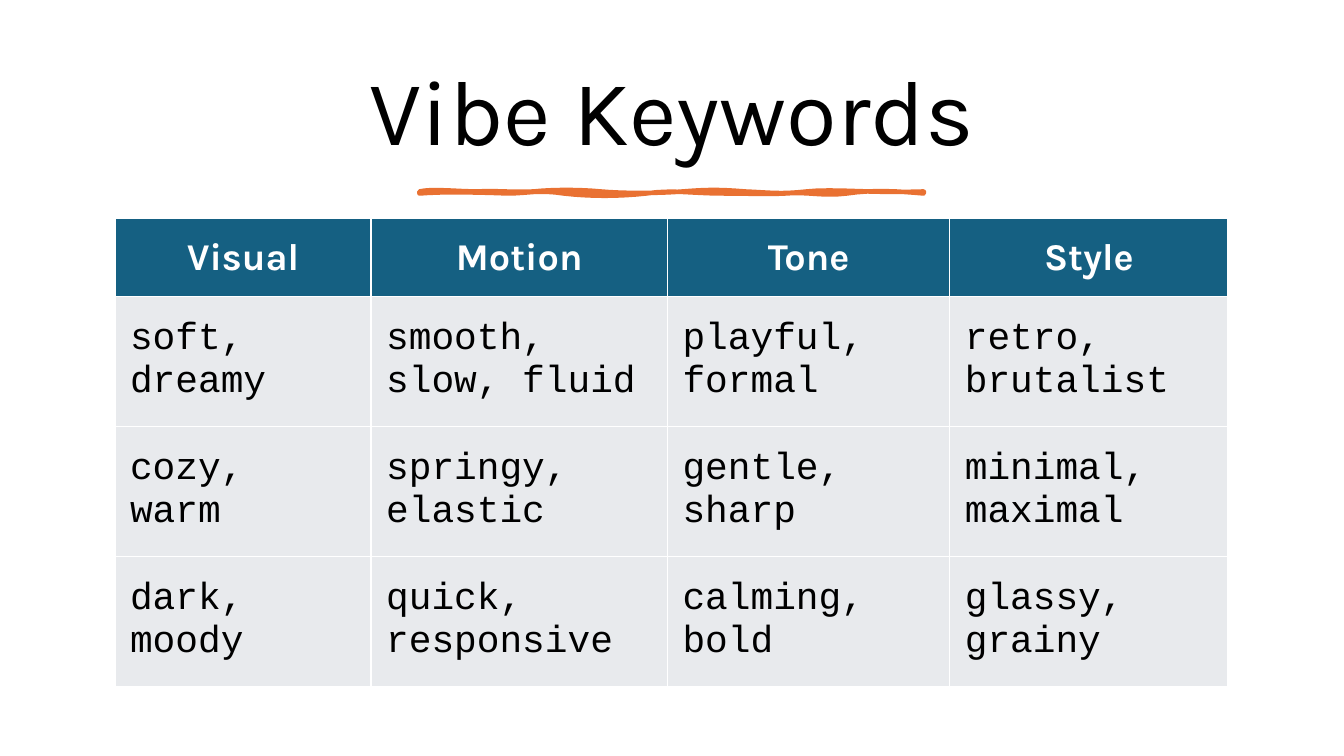
from dataclasses import dataclass

import pptx
import pptx.dml.color
import pptx.enum.text
import pptx.oxml
import pptx.oxml.ns
import pptx.util
from pptx.util import Inches


def color(value):
    return pptx.dml.color.RGBColor.from_string(value)


@dataclass(frozen=True)
class Theme:
    heading_font: str = "Karla"
    keyword_font: str = "Courier New"
    title_size: int = 66
    table_size: int = 27
    ink: str = "000000"
    white: str = "FFFFFF"
    accent: str = "E97132"
    header: str = "156082"
    body: str = "E8EAED"


THEME = Theme()
CENTER = pptx.enum.text.PP_ALIGN.CENTER
LEFT = pptx.enum.text.PP_ALIGN.LEFT
MIDDLE = pptx.enum.text.MSO_ANCHOR.MIDDLE

KEYWORDS = [
    ["Visual", "Motion", "Tone", "Style"],
    ["soft, dreamy", "smooth, slow, fluid", "playful, formal", "retro, brutalist"],
    ["cozy, warm", "springy, elastic", "gentle, sharp", "minimal, maximal"],
    ["dark, moody", "quick, responsive", "calming, bold", "glassy, grainy"],
]
COLUMN_WIDTHS = [2.54, 2.94, 2.8, 2.76]
ROW_HEIGHTS = [0.77, 1.29, 1.29, 1.29]

# Bézier segments of the brush stroke, in inches from its top left corner:
# two control points and an end point each.
STROKE = [
    (0.12, -0.03, 0.38, 0, 0.57, 0), (0.76, -0.01, 0.93, 0.01, 1.13, 0),
    (1.33, -0.02, 1.58, -0.02, 1.8, 0), (2.01, 0.02, 2.37, 0.02, 2.61, 0),
    (2.86, -0.02, 2.98, -0.02, 3.23, 0), (3.47, 0.01, 3.58, 0.03, 3.84, 0),
    (4.1, -0.03, 4.51, 0.02, 5, 0), (5.01, 0.01, 5, 0.01, 5, 0.02),
    (4.79, 0, 4.49, -0.02, 4.24, 0.02), (3.99, 0.05, 3.85, 0, 3.63, 0.02),
    (3.4, 0.03, 3.31, 0.02, 3.01, 0.02), (2.71, 0.02, 2.51, -0.02, 2.25, 0.02),
    (1.98, 0.05, 1.69, 0.05, 1.43, 0.02), (1.18, -0.02, 1.07, 0.02, 0.87, 0.02),
    (0.67, 0.01, 0.22, 0, 0, 0.02),
]


def style_paragraph(paragraph, font_name, size, font_color, alignment, bold=False):
    paragraph.alignment = alignment
    paragraph.font.name = font_name
    paragraph.font.size = pptx.util.Pt(size)
    paragraph.font.color.rgb = color(font_color)
    paragraph.font.bold = bold


def add_title(slide, text, left, top, width, height):
    title = slide.shapes.title
    title.left, title.top = Inches(left), Inches(top)
    title.width, title.height = Inches(width), Inches(height)
    title.text_frame.text = text
    title.text_frame.vertical_anchor = MIDDLE
    paragraph = title.text_frame.paragraphs[0]
    paragraph.line_spacing = 0.9
    style_paragraph(paragraph, THEME.heading_font, THEME.title_size, THEME.ink, CENTER)


def stroke_points(segments, steps=8):
    """Sample the Bézier segments, starting from the origin."""
    x, y = 0, 0
    for x1, y1, x2, y2, end_x, end_y in segments:
        for step in range(1, steps + 1):
            t = step / steps
            weights = ((1 - t) ** 3, 3 * t * (1 - t) ** 2, 3 * t * t * (1 - t), t ** 3)
            yield (sum(w * v for w, v in zip(weights, (x, x1, x2, end_x))),
                   sum(w * v for w, v in zip(weights, (y, y1, y2, end_y))))
        x, y = end_x, end_y


def add_underline(slide, left, top):
    builder = slide.shapes.build_freeform(Inches(left), Inches(top))
    builder.add_line_segments(
        [(Inches(left + x), Inches(top + y)) for x, y in stroke_points(STROKE)])
    underline = builder.convert_to_shape()
    underline.shadow.inherit = False
    underline.fill.solid()
    underline.fill.fore_color.rgb = color(THEME.accent)
    underline.line.color.rgb = color(THEME.accent)
    underline.line.width = pptx.util.Pt(3.25)


def add_borders(cell):
    properties = cell._tc.get_or_add_tcPr()
    for index, side in enumerate(("lnL", "lnR", "lnT", "lnB")):
        border = pptx.oxml.parse_xml(
            f'<a:{side} {pptx.oxml.ns.nsdecls("a")} w="12700"><a:solidFill>'
            f'<a:srgbClr val="{THEME.white}"/></a:solidFill></a:{side}>')
        properties.insert(index, border)


def fill_cell(cell, text, is_header):
    cell.text = text
    cell.vertical_anchor = MIDDLE
    cell.margin_left = cell.margin_right = Inches(0.15)
    cell.margin_top = cell.margin_bottom = Inches(0.07)
    cell.fill.solid()
    cell.fill.fore_color.rgb = color(THEME.header if is_header else THEME.body)
    style_paragraph(
        cell.text_frame.paragraphs[0],
        THEME.heading_font if is_header else THEME.keyword_font,
        THEME.table_size,
        THEME.white if is_header else THEME.ink,
        CENTER if is_header else LEFT,
        bold=is_header)
    add_borders(cell)


def add_keyword_table(slide, left, top):
    table = slide.shapes.add_table(
        len(ROW_HEIGHTS), len(COLUMN_WIDTHS), Inches(left), Inches(top),
        Inches(sum(COLUMN_WIDTHS)), Inches(sum(ROW_HEIGHTS))).table
    for column, width in zip(table.columns, COLUMN_WIDTHS):
        column.width = Inches(width)
    for row_index, (row, height) in enumerate(zip(table.rows, ROW_HEIGHTS)):
        row.height = Inches(height)
        for cell, text in zip(row.cells, KEYWORDS[row_index]):
            fill_cell(cell, text, is_header=row_index == 0)


def main():
    presentation = pptx.Presentation()
    presentation.slide_width = Inches(13.33)
    presentation.slide_height = Inches(7.5)
    title_only = presentation.slide_layouts.get_by_name("Title Only")
    slide = presentation.slides.add_slide(title_only)
    add_title(slide, "Vibe Keywords", 0.7, 0.46, 11.93, 1.37)
    add_underline(slide, 4.16, 1.9)
    add_keyword_table(slide, 1.14, 2.17)
    presentation.save("out.pptx")


if __name__ == "__main__":
    main()
